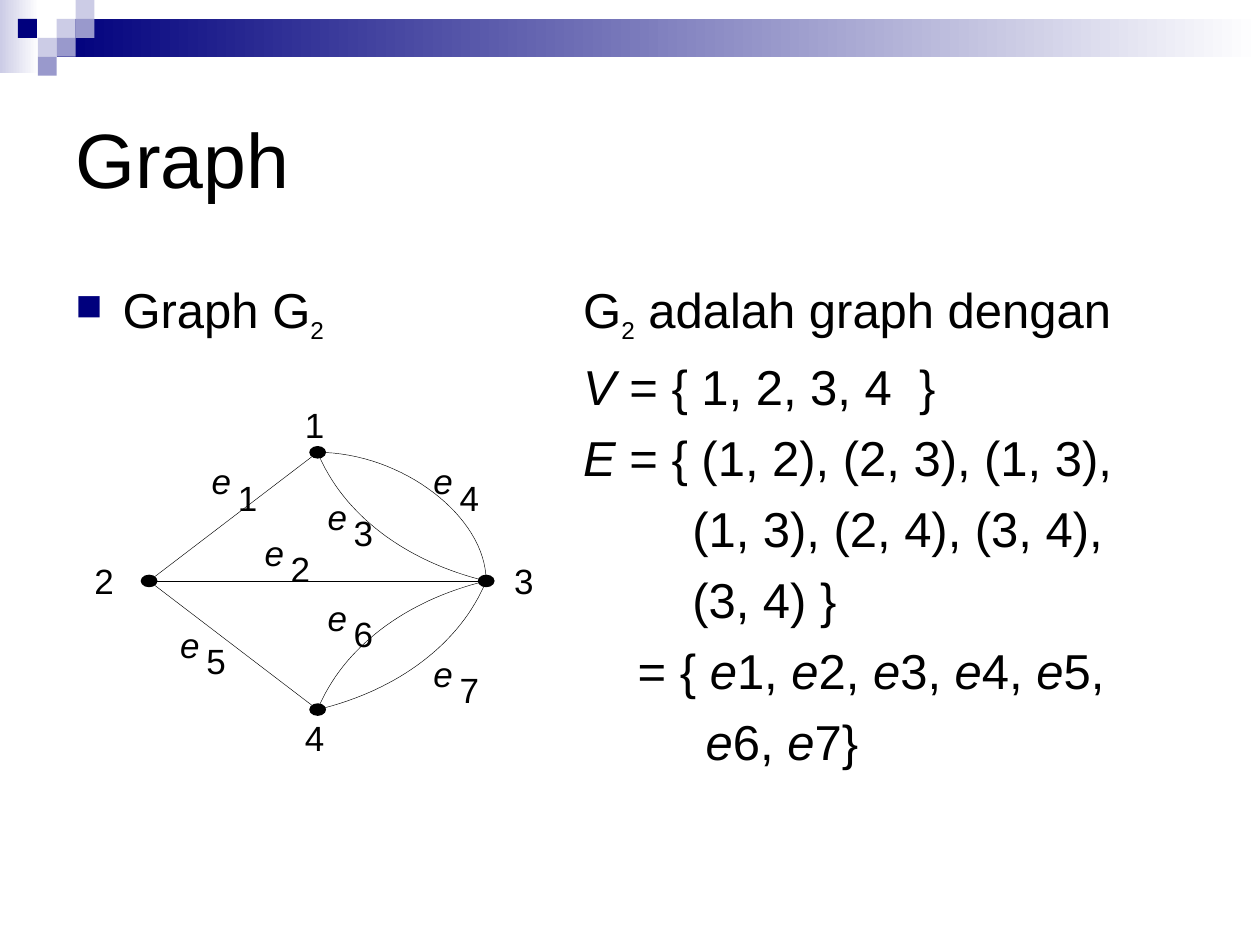
from lxml.etree import SubElement
from pptx import Presentation
from pptx.dml.color import RGBColor
from pptx.enum.shapes import MSO_CONNECTOR, MSO_SHAPE
from pptx.enum.text import MSO_ANCHOR
from pptx.oxml.ns import qn
from pptx.util import Pt

BLACK = RGBColor(0, 0, 0)
WHITE = RGBColor(255, 255, 255)
NAVY = RGBColor(0, 0, 125)
LILAC = RGBColor(204, 204, 230)
MAUVE = RGBColor(153, 153, 204)

INSET = dict(margin_left=Pt(7.2), margin_right=Pt(7.2), margin_top=Pt(3.6),
             margin_bottom=Pt(3.6), word_wrap=True)
TIGHT = dict(margin_left=0, margin_right=0, margin_top=0, margin_bottom=0,
             word_wrap=False)


def apply(item, form):
    """Set each attribute named in the format dict."""
    for name, value in form.items():
        setattr(item, name, value)


def add_run(para, text, size, italic=False, sub=False):
    """Add a run of Arial text, lowered if it is a subscript."""
    run = para.add_run()
    run.text = text
    apply(run.font, dict(name="Arial", size=Pt(size), italic=italic))
    run.font.color.rgb = BLACK
    if sub:
        run.font._element.set("baseline", "-25000")


def add_frame(slide, box, form):
    """Add a text box and return its formatted frame."""
    frame = slide.shapes.add_textbox(*map(Pt, box)).text_frame
    apply(frame, form)
    return frame


def add_solid(slide, kind, box, color, fade=False):
    """Add a borderless shape, plain or fading to white."""
    shape = slide.shapes.add_shape(kind, *map(Pt, box))
    shape.shadow.inherit = False
    shape.line.fill.background()
    if fade:
        shape.fill.gradient()
        shape.fill.gradient_angle = 0
        for stop, tone in zip(shape.fill.gradient_stops, (color, WHITE)):
            stop.color.rgb = tone
    else:
        shape.fill.solid()
        shape.fill.fore_color.rgb = color


def draw_band(slide, box):
    """Draw the fading band and its checkered tiles."""
    left, top, width, height = box
    unit = 10.8
    rect = MSO_SHAPE.RECTANGLE
    add_solid(slide, rect, (left, top, 22.3, height), LILAC, True)
    add_solid(slide, rect, (left + 3 * unit, top + unit, width - 3 * unit, 2 * unit),
              NAVY, True)
    tiles = [(3, 1, LILAC), (4, 0, LILAC), (4, 1, MAUVE), (2, 2, LILAC),
             (0.95, 1, NAVY), (3, 2, MAUVE), (2, 3, MAUVE)]
    for col, row, color in tiles:
        add_solid(slide, rect, (left + col * unit, top + row * unit, unit, unit), color)


def draw_title(slide, box):
    """Write the slide title, centred in height."""
    frame = add_frame(slide, box, INSET | dict(vertical_anchor=MSO_ANCHOR.MIDDLE))
    add_run(frame.paragraphs[0], "Graph", 44)


def draw_point(slide, box):
    """Write the bulleted heading of the graph."""
    para = add_frame(slide, box, INSET).paragraphs[0]
    para.space_before = Pt(7)
    props = para._p.get_or_add_pPr()
    props.set("marL", str(Pt(27)))
    props.set("indent", str(-Pt(27)))
    tint = SubElement(props, qn("a:buClr"))
    SubElement(tint, qn("a:srgbClr"), val=str(NAVY))
    SubElement(props, qn("a:buSzPct"), val="75000")
    SubElement(props, qn("a:buChar"), char="■")
    add_run(para, "Graph G", 28)
    add_run(para, "2", 24, sub=True)


def draw_sets(slide, box):
    """Write the vertex and edge sets; stars enclose italics."""
    frame = add_frame(slide, box, INSET)
    para = frame.paragraphs[0]
    para.space_before = Pt(7)
    add_run(para, "G", 28)
    add_run(para, "2", 24, sub=True)
    add_run(para, " adalah graph dengan", 28)
    rows = [(0, "*V* = { 1, 2, 3, 4  }"),
            (0, "*E* = { (1, 2), (2, 3), (1, 3),"),
            (62.3, "(1, 3), (2, 4), (3, 4),"),
            (62.3, "(3, 4) }"),
            (31.1, "= { *e*1, *e*2, *e*3, *e*4, *e*5,"),
            (70, "*e*6, *e*7}")]
    for indent, text in rows:
        para = frame.add_paragraph()
        para.space_before = Pt(7)
        para._p.get_or_add_pPr().set("marL", str(Pt(indent)))
        for turn, part in enumerate(text.split("*")):
            if part:
                add_run(para, part, 28, italic=turn % 2 == 1)


def ink(shape):
    """Give a shape the thin black edge line."""
    shape.line.width = Pt(0.25)
    shape.line.color.rgb = BLACK


def add_bend(slide, start, end, pull):
    """Draw a Bezier edge whose pulls are fractions of its span."""
    knots = [(0, 0), *pull, (1, 1)]
    steps = 32
    spots = []
    for step in range(steps + 1):
        t = step / steps
        mix = ((1 - t) ** 3, 3 * t * (1 - t) ** 2, 3 * t * t * (1 - t), t ** 3)
        spots.append(tuple(
            Pt(start[axis] + (end[axis] - start[axis])
               * sum(m * knot[axis] for m, knot in zip(mix, knots)))
            for axis in (0, 1)))
    pen = slide.shapes.build_freeform(*spots[0])
    pen.add_line_segments(spots[1:], close=False)
    shape = pen.convert_to_shape()
    shape.shadow.inherit = False
    shape.fill.background()
    ink(shape)


def draw_graph(slide, box):
    """Draw the graph with its nodes, edges and labels."""
    left, top, width, height = box
    mid, axis = left + width / 2, top + height / 2
    nodes = {1: (mid, top), 2: (left, axis), 3: (left + width, axis),
             4: (mid, top + height)}
    for x, y in nodes.values():
        add_solid(slide, MSO_SHAPE.OVAL, (x - 4.8, y - 3.6, 9.6, 7.2), BLACK)
    for a, b in [(2, 4), (1, 2), (2, 3)]:
        edge = slide.shapes.add_connector(
            MSO_CONNECTOR.STRAIGHT, *map(Pt, nodes[a] + nodes[b]))
        ink(edge)
        SubElement(edge._element.spPr, qn("a:effectLst"))
    slack = [(0.15, 0.48), (0.52, 0.85)]
    bulge = [(0.5, 0), (1, 0.5)]
    for a, b, pull in [(1, 3, slack), (4, 3, slack), (1, 3, bulge), (3, 4, slack)]:
        add_bend(slide, nodes[a], nodes[b], pull)
    marks = [("1", 89, -28.1), ("2", -31.2, 61.2), ("3", 208.6, 61.2), ("4", 89, 151.2)]
    names = [(35.8, 4.3), (66, 45.3), (102, 24.5), (162.5, 4.3), (17.8, 97.9),
             (102, 82.1), (162.5, 114.5)]
    for num, (x, y) in enumerate(names, 1):
        marks += [("e", x, y), (str(num), x + 14.9, y + 9.2)]
    for text, x, y in marks:
        frame = add_frame(slide, (left + x, top + y, 11.1, 24), TIGHT)
        add_run(frame.paragraphs[0], text, 20, italic=text == "e")


def main():
    """Build the slide and save it."""
    deck = Presentation()
    apply(deck, dict(slide_width=Pt(720), slide_height=Pt(540)))
    slide = deck.slides.add_slide(deck.slide_layouts[6])
    draw_band(slide, (0, 0, 720, 41.8))
    draw_title(slide, (36, 36, 648, 108))
    draw_point(slide, (36, 156.2, 318.2, 306))
    draw_sets(slide, (326.2, 156.2, 357.8, 306))
    draw_graph(slide, (85.2, 258.5, 192.6, 147))
    deck.save("out.pptx")


if __name__ == "__main__":
    main()
